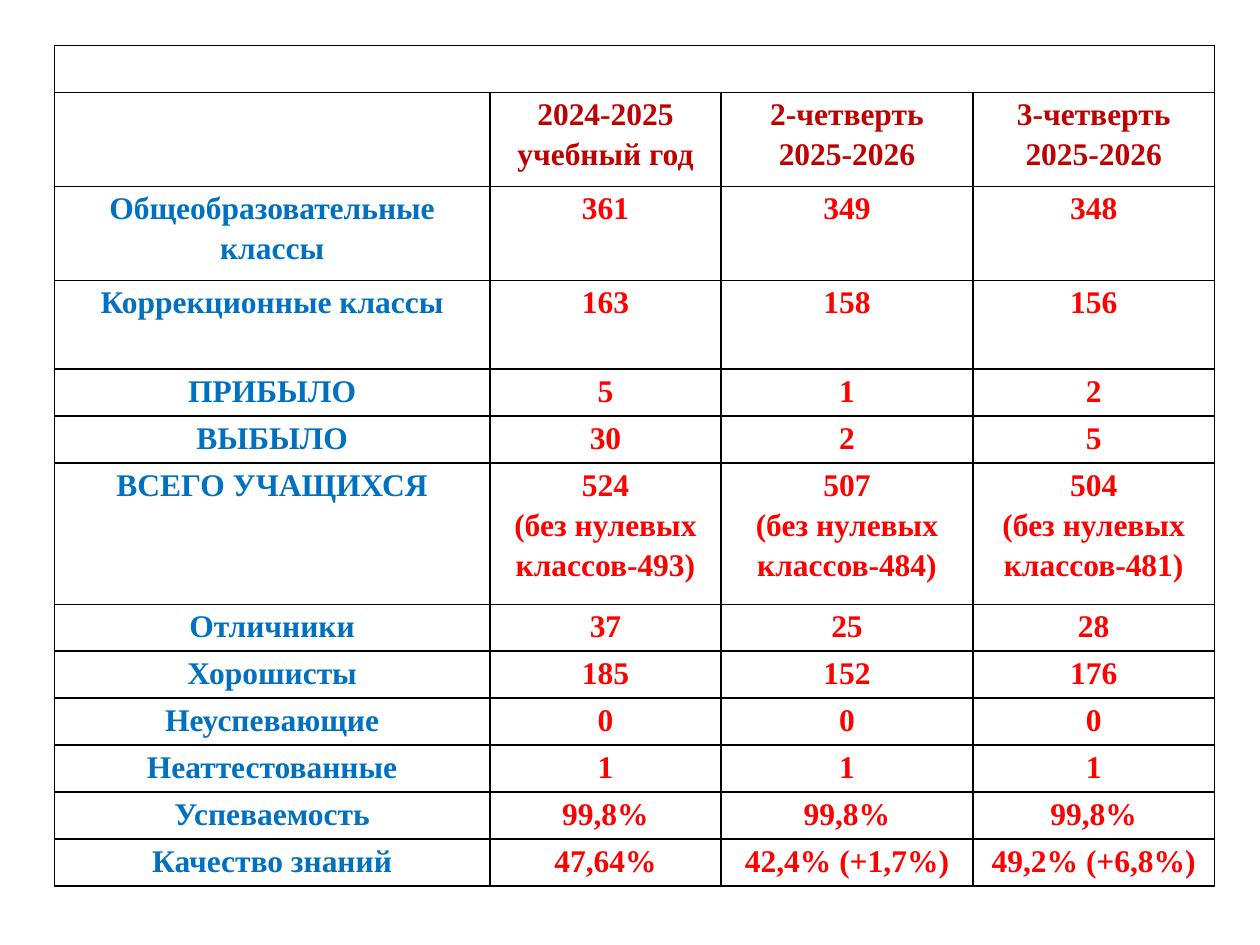
"""Build a slide with a table of school results by term."""
from lxml import etree
from pptx import Presentation
from pptx.dml.color import RGBColor
from pptx.enum.text import PP_ALIGN
from pptx.oxml.ns import qn
from pptx.util import Pt

CENTER = PP_ALIGN.CENTER
HEAD, LABEL, VALUE = "C00000", "0070C0", "FF0000"
WIDTHS = [249, 132, 144, 138]
LINE, PAIR = 26.86, 53.7
HEIGHTS = [LINE, PAIR, PAIR, 50.6, LINE, LINE, 80.8] + [LINE] * 6
ROWS = [
    ["", "2024-2025 учебный год", "2-четверть 2025-2026", "3-четверть 2025-2026"],
    ["Общеобразовательные классы", "361", "349", "348"],
    ["Коррекционные классы", "163", "158", "156"],
    ["ПРИБЫЛО", "5", "1", "2"],
    ["ВЫБЫЛО", "30", "2", "5"],
    ["ВСЕГО УЧАЩИХСЯ", "524\n(без нулевых классов-493)",
     "507\n(без нулевых классов-484)", "504\n(без нулевых классов-481)"],
    ["Отличники", "37", "25", "28"],
    ["Хорошисты", "185", "152", "176"],
    ["Неуспевающие", "0", "0", "0"],
    ["Неаттестованные", "1", "1", "1"],
    ["Успеваемость", "99,8%", "99,8%", "99,8%"],
    ["Качество знаний", "47,64%", "42,4% (+1,7%)", "49,2% (+6,8%)"],
]
PLAIN = {"first_row": False, "horz_banding": False}
INSETS = {"margin_left": Pt(5), "margin_right": Pt(5),
          "margin_top": 0, "margin_bottom": 0}
PARA = {"alignment": CENTER, "line_spacing": 1.15}
FONT = {"name": "Times New Roman", "size": Pt(18), "bold": True}


def apply(item, form):
    """Set each format value on an item."""
    for name, value in form.items():
        setattr(item, name, value)


def paint(color, tone):
    """Give a colour object a hex colour."""
    color.rgb = RGBColor.from_string(tone)


def edge(cell, tone="000000"):
    """Draw a thin line on all four sides of a cell."""
    props = cell._tc.get_or_add_tcPr()
    for side in ("lnL", "lnR", "lnT", "lnB"):
        line = etree.SubElement(props, qn(f"a:{side}"), w=str(Pt(1)))
        fill = etree.SubElement(line, qn("a:solidFill"))
        etree.SubElement(fill, qn("a:srgbClr"), val=tone)


def write(cell, text, tone):
    """Put formatted text in a cell."""
    cell.text = text
    for para in cell.text_frame.paragraphs:
        apply(para, PARA)
        for run in para.runs:
            apply(run.font, FONT)
            paint(run.font.color, tone)


def grid(slide):
    """Add the empty ruled table and return it."""
    frame = slide.shapes.add_table(
        len(HEIGHTS), len(WIDTHS), Pt(31), Pt(26),
        Pt(sum(WIDTHS)), Pt(sum(HEIGHTS)))
    table = frame.table
    apply(table, PLAIN)
    for col, width in zip(table.columns, WIDTHS):
        col.width = Pt(width)
    for row, height in zip(table.rows, HEIGHTS):
        row.height = Pt(height)
    for cell in table.iter_cells():
        apply(cell, INSETS)
        edge(cell)
        cell.fill.background()
    table.cell(0, 0).merge(table.cell(0, len(WIDTHS) - 1))
    return table


def main():
    """Build and save the slide."""
    deck = Presentation()
    apply(deck, {"slide_width": Pt(720), "slide_height": Pt(540)})
    table = grid(deck.slides.add_slide(deck.slide_layouts[6]))
    for r, row in enumerate(ROWS, 1):
        for c, text in enumerate(row):
            tone = HEAD if r == 1 else VALUE if c else LABEL
            if text:
                write(table.cell(r, c), text, tone)
    deck.save("out.pptx")


if __name__ == "__main__":
    main()
